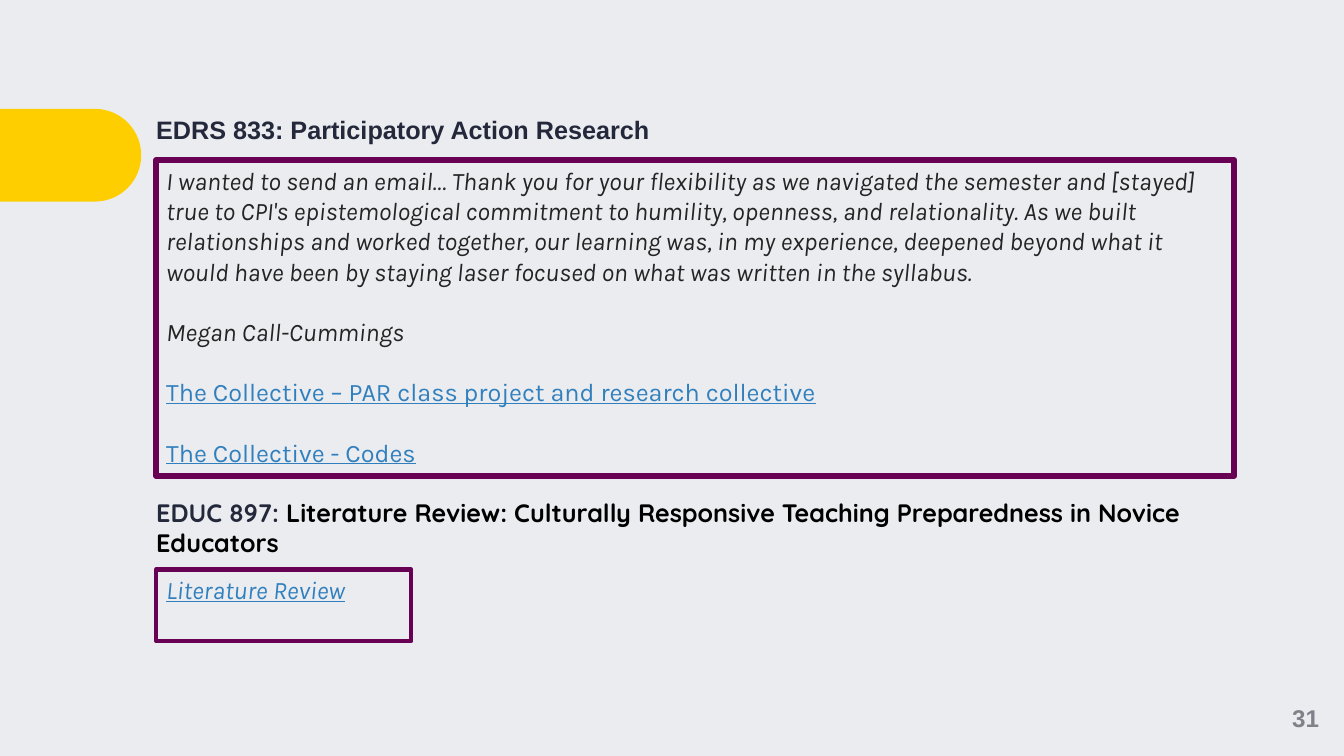
"""Build the course reflections slide with its two framed course sections."""
from dataclasses import dataclass

from pptx import Presentation
from pptx.dml.color import RGBColor
from pptx.enum.shapes import MSO_SHAPE
from pptx.enum.text import MSO_ANCHOR, PP_ALIGN
from pptx.util import Emu, Inches, Pt

RECTANGLE = MSO_SHAPE.RECTANGLE
ROUNDED_TAB = MSO_SHAPE.ROUND_2_SAME_RECTANGLE
LEFT, CENTER = PP_ALIGN.LEFT, PP_ALIGN.CENTER
TOP, MIDDLE = MSO_ANCHOR.TOP, MSO_ANCHOR.MIDDLE


@dataclass(frozen=True)
class Theme:
    """Colours, fonts and type sizes of the slide."""
    background: str = "EAECF0"
    tab: str = "FFCE00"
    border: str = "680053"
    heading: str = "24283B"
    title: str = "000000"
    body: str = "242424"
    link: str = "3180BD"
    number: str = "80828B"
    plain_font: str = "Arial"
    body_font: str = "Karla"
    title_font: str = "Quicksand"
    text_size: float = 18
    number_size: float = 17.3
    paragraph_gap: float = 21.5


class CourseSlide:
    """Draws elements placed in percent of the slide's width and height."""

    def __init__(self, deck, theme):
        """Add a blank slide with the theme's background."""
        self.deck, self.theme = deck, theme
        self.slide = deck.slides.add_slide(deck.slide_layouts[6])
        self.paint(self.slide.background.fill, theme.background)

    def paint(self, fill, color):
        """Fill with one solid colour."""
        fill.solid()
        fill.fore_color.rgb = RGBColor.from_string(color)

    def place(self, left, top, width, height):
        """Turn percentages into slide lengths."""
        across, down = self.deck.slide_width, self.deck.slide_height
        pairs = ((left, across), (top, down), (width, across), (height, down))
        return [Emu(round(share * side / 100)) for share, side in pairs]

    def style(self, font, name, color, size=None, bold=False, italic=False, underline=False):
        """Set every property of a font."""
        font.name, font.size = name, Pt(size or self.theme.text_size)
        font.bold, font.italic, font.underline = bold, italic, underline
        font.color.rgb = RGBColor.from_string(color)

    def tab(self, area):
        """Draw the rounded tab on the left edge."""
        tab = self.slide.shapes.add_shape(ROUNDED_TAB, *self.place(*area))
        tab.rotation = 90
        tab.adjustments[0], tab.adjustments[1] = 0.5, 0
        tab.shadow.inherit = False
        self.paint(tab.fill, self.theme.tab)
        tab.line.fill.background()

    def heading(self, area, parts, name):
        """Write a bold heading from text and colour pairs."""
        frame = self.slide.shapes.add_textbox(*self.place(*area)).text_frame
        frame.word_wrap = True
        for text, color in parts:
            run = frame.paragraphs[0].add_run()
            run.text = text
            self.style(run.font, name, color, bold=True)

    def framed(self, area, border, entries):
        """Draw a bordered box of text, colour, italic and underline entries."""
        box = self.slide.shapes.add_shape(RECTANGLE, *self.place(*area))
        box.shadow.inherit = False
        box.fill.background()
        box.line.width = Pt(border)
        box.line.color.rgb = RGBColor.from_string(self.theme.border)
        frame = box.text_frame
        frame.word_wrap, frame.vertical_anchor = True, TOP
        for index, (text, color, italic, underline) in enumerate(entries):
            entry = frame.add_paragraph() if index else frame.paragraphs[0]
            entry.text, entry.alignment = text, LEFT
            if index:
                entry.space_before = Pt(self.theme.paragraph_gap)
            self.style(entry.font, self.theme.body_font, color,
                       italic=italic, underline=underline)

    def page_number(self, area, text):
        """Write the centred page number."""
        frame = self.slide.shapes.add_textbox(*self.place(*area)).text_frame
        frame.margin_left = frame.margin_right = frame.margin_top = frame.margin_bottom = 0
        frame.word_wrap, frame.vertical_anchor = True, MIDDLE
        number = frame.paragraphs[0]
        number.text, number.alignment = text, CENTER
        self.style(number.font, self.theme.plain_font, self.theme.number,
                   self.theme.number_size, bold=True)


def main():
    """Build and save the slide."""
    deck = Presentation()
    deck.slide_width, deck.slide_height = Inches(13.33), Inches(7.5)
    theme = Theme()
    page = CourseSlide(deck, theme)
    heading_left, frame_left, content_width = 10.88, 11.63, 80.2

    page.tab((1.8, 11.2, 6.9, 18.67))
    page.page_number((94.3, 90, 5.7, 10), "31")
    page.heading((heading_left, 14.53, content_width, 13.47),
                 [("EDRS 833: Participatory Action Research", theme.heading)],
                 theme.plain_font)
    page.framed((frame_left, 21.2, content_width, 41.73), 4.5, [
        ("I wanted to send an email… Thank you for your flexibility as we navigated "
         "the semester and [stayed] true to CPI's epistemological commitment to "
         "humility, openness, and relationality. As we built relationships and worked "
         "together, our learning was, in my experience, deepened beyond what it would "
         "have been by staying laser focused on what was written in the syllabus.",
         theme.body, True, False),
        ("Megan Call-Cummings", theme.body, True, False),
        ("The Collective – PAR class project and research collective",
         theme.link, False, True),
        ("The Collective - Codes", theme.link, False, True),
    ])
    page.heading((heading_left, 65.07, content_width, 9.47), [
        ("EDUC 897: ", theme.heading),
        ("Literature Review: Culturally Responsive Teaching Preparedness in Novice Educators",
         theme.title),
    ], theme.title_font)
    page.framed((frame_left, 75.33, 18.98, 9.47), 3,
                [("Literature Review", theme.link, True, True)])
    deck.save("out.pptx")


if __name__ == "__main__":
    main()
